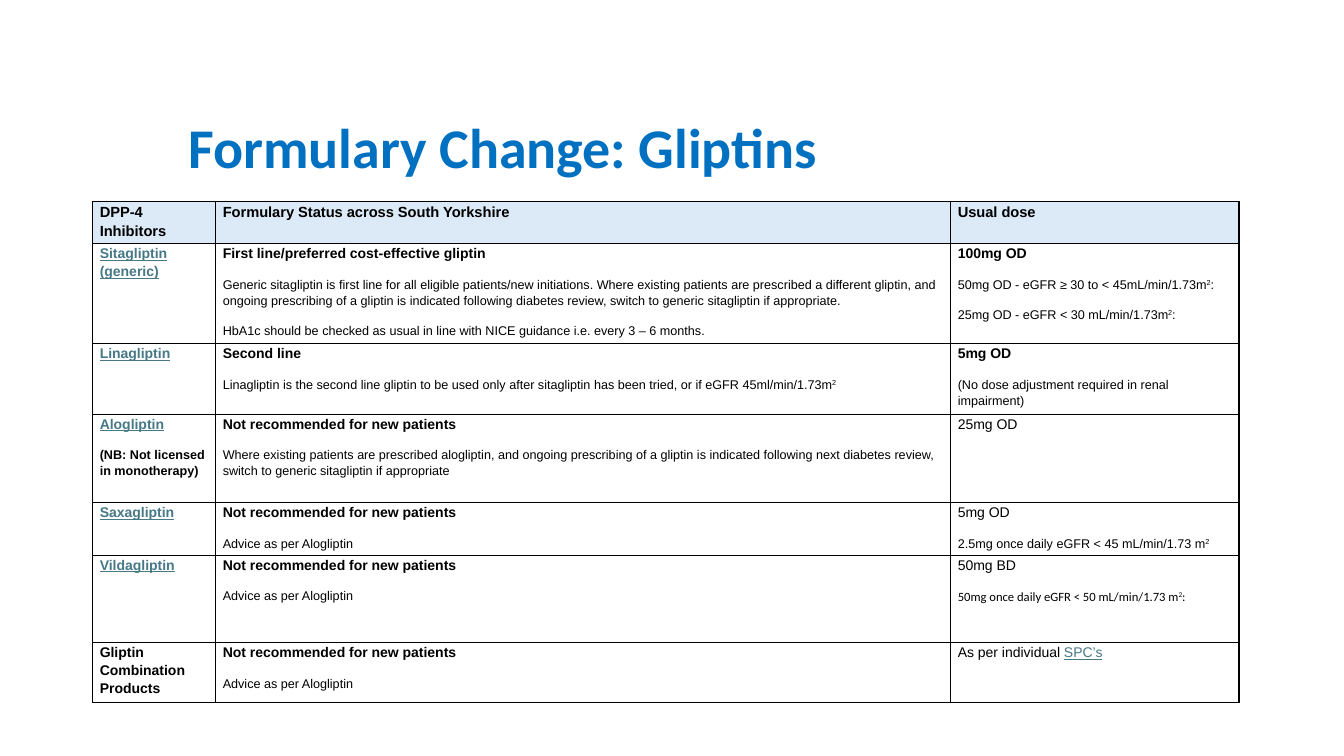
from dataclasses import dataclass
from typing import NamedTuple

from lxml import etree
from pptx import Presentation
from pptx.dml.color import RGBColor
from pptx.oxml.ns import qn
from pptx.util import Inches, Pt


@dataclass(frozen=True)
class Theme:
    title: RGBColor = RGBColor(0x00, 0x70, 0xC0)
    ink: RGBColor = RGBColor(0x00, 0x00, 0x00)
    link: RGBColor = RGBColor(0x46, 0x78, 0x86)
    band: RGBColor = RGBColor(0xDC, 0xEA, 0xF7)
    sans: str = "Arial"
    alt: str = "Calibri"
    huge: float = 40
    head: float = 10.5
    lead: float = 10
    note: float = 9


THEME = Theme()


class Run(NamedTuple):
    text: str
    sup: bool = False
    link: bool = False


class Line(NamedTuple):
    runs: tuple[Run, ...]
    size: float = THEME.note
    bold: bool = False
    face: str = THEME.sans


class Row(NamedTuple):
    height: float
    cells: tuple[tuple[Line, ...], ...]


def head(text: str) -> Line:
    return Line((Run(text),), THEME.head, True)


def lead(text: str, bold: bool = True) -> Line:
    return Line((Run(text),), THEME.lead, bold)


def drug(text: str) -> Line:
    return Line((Run(text, link=True),), THEME.lead, True)


def note(text: str, bold: bool = False) -> Line:
    return Line((Run(text),), bold=bold)


def area(text: str, tail: str = "", face: str = THEME.sans) -> Line:
    """A note that ends in a squared unit."""
    runs = (Run(text), Run("2", sup=True))
    return Line(runs + ((Run(tail),) if tail else ()), face=face)


AVOID = lead("Not recommended for new patients")
SAME = (AVOID, note("Advice as per Alogliptin"))
COLS = (1.22, 7.29, 2.86)
ROWS = (
    Row(0.42, (
        (head("DPP-4 Inhibitors"),),
        (head("Formulary Status across South Yorkshire"),),
        (head("Usual dose"),),
    )),
    Row(0.97, (
        (drug("Sitagliptin (generic)"),),
        (lead("First line/preferred cost-effective gliptin"),
         note("Generic sitagliptin is first line for all eligible patients/new "
              "initiations. Where existing patients are prescribed a different "
              "gliptin, and ongoing prescribing of a gliptin is indicated following "
              "diabetes review, switch to generic sitagliptin if appropriate."),
         note("HbA1c should be checked as usual in line with NICE guidance "
              "i.e. every 3 – 6 months.")),
        (lead("100mg OD"),
         area("50mg OD - eGFR ≥ 30 to < 45mL/min/1.73m", ":"),
         area("25mg OD - eGFR < 30 mL/min/1.73m", ":")),
    )),
    Row(0.7, (
        (drug("Linagliptin"),),
        (lead("Second line"),
         area("Linagliptin is the second line gliptin to be used only after "
              "sitagliptin has been tried, or if eGFR 45ml/min/1.73m")),
        (lead("5mg OD"),
         note("(No dose adjustment required in renal impairment)")),
    )),
    Row(0.88, (
        (drug("Alogliptin"), note("(NB: Not licensed in monotherapy)", True)),
        (AVOID,
         note("Where existing patients are prescribed alogliptin, and ongoing "
              "prescribing of a gliptin is indicated following next diabetes "
              "review, switch to generic sitagliptin if appropriate")),
        (lead("25mg OD", False),),
    )),
    Row(0.52, (
        (drug("Saxagliptin"),),
        SAME,
        (lead("5mg OD", False), area("2.5mg once daily eGFR < 45 mL/min/1.73 m")),
    )),
    Row(0.87, (
        (drug("Vildagliptin"),),
        SAME,
        (lead("50mg BD", False),
         area("50mg once daily eGFR < 50 mL/min/1.73 m", ":", THEME.alt)),
    )),
    Row(0.59, (
        (lead("Gliptin Combination Products"),),
        SAME,
        (Line((Run("As per individual "), Run("SPC’s", link=True)), THEME.lead),),
    )),
)


def write(para, line: Line) -> None:
    font = para.font
    font.name, font.size, font.bold = line.face, Pt(line.size), line.bold
    font.color.rgb = THEME.ink
    for part in line.runs:
        run = para.add_run()
        run.text = part.text
        if part.link:
            run.font.color.rgb = THEME.link
            run.font.underline = True
        if part.sup:
            run.font._element.set("baseline", "30000")


def frame(cell) -> None:
    """Draw a thin line on all four sides of a cell."""
    props = cell._tc.get_or_add_tcPr()
    for spot, side in enumerate(("lnL", "lnR", "lnT", "lnB")):
        edge = etree.Element(qn(f"a:{side}"), w=str(Pt(1)))
        fill = etree.SubElement(edge, qn("a:solidFill"))
        etree.SubElement(fill, qn("a:srgbClr"), val=str(THEME.ink))
        props.insert(spot, edge)


def fill_cell(cell, lines: tuple[Line, ...], top: bool) -> None:
    cell.margin_left = cell.margin_right = Inches(0.07)
    cell.margin_top = cell.margin_bottom = Inches(0)
    if top:
        cell.fill.solid()
        cell.fill.fore_color.rgb = THEME.band
    else:
        cell.fill.background()
    frame(cell)
    text = cell.text_frame
    for i, line in enumerate(lines):
        para = text.add_paragraph() if i else text.paragraphs[0]
        para.line_spacing = 1.15
        para.space_after = Pt(10)
        write(para, line)


def add_title(slide) -> None:
    box = slide.shapes.add_textbox(
        Inches(1.77), Inches(1.07), Inches(6.79), Inches(0.77))
    box.text_frame.word_wrap = True
    para = box.text_frame.paragraphs[0]
    para.text = "Formulary Change: Gliptins"
    font = para.font
    font.name, font.size, font.bold = THEME.alt, Pt(THEME.huge), True
    font.color.rgb = THEME.title


def add_grid(slide) -> None:
    table = slide.shapes.add_table(
        len(ROWS), len(COLS), Inches(0.92), Inches(2),
        Inches(sum(COLS)), Inches(sum(row.height for row in ROWS))).table
    table.first_row = table.horz_banding = False
    for col, width in zip(table.columns, COLS):
        col.width = Inches(width)
    for r, row in enumerate(ROWS):
        table.rows[r].height = Inches(row.height)
        for c, lines in enumerate(row.cells):
            fill_cell(table.cell(r, c), lines, r == 0)


def main() -> None:
    deck = Presentation()
    deck.slide_width, deck.slide_height = Inches(13.33), Inches(7.5)
    slide = deck.slides.add_slide(deck.slide_layouts[6])
    add_title(slide)
    add_grid(slide)
    deck.save("out.pptx")


if __name__ == "__main__":
    main()
